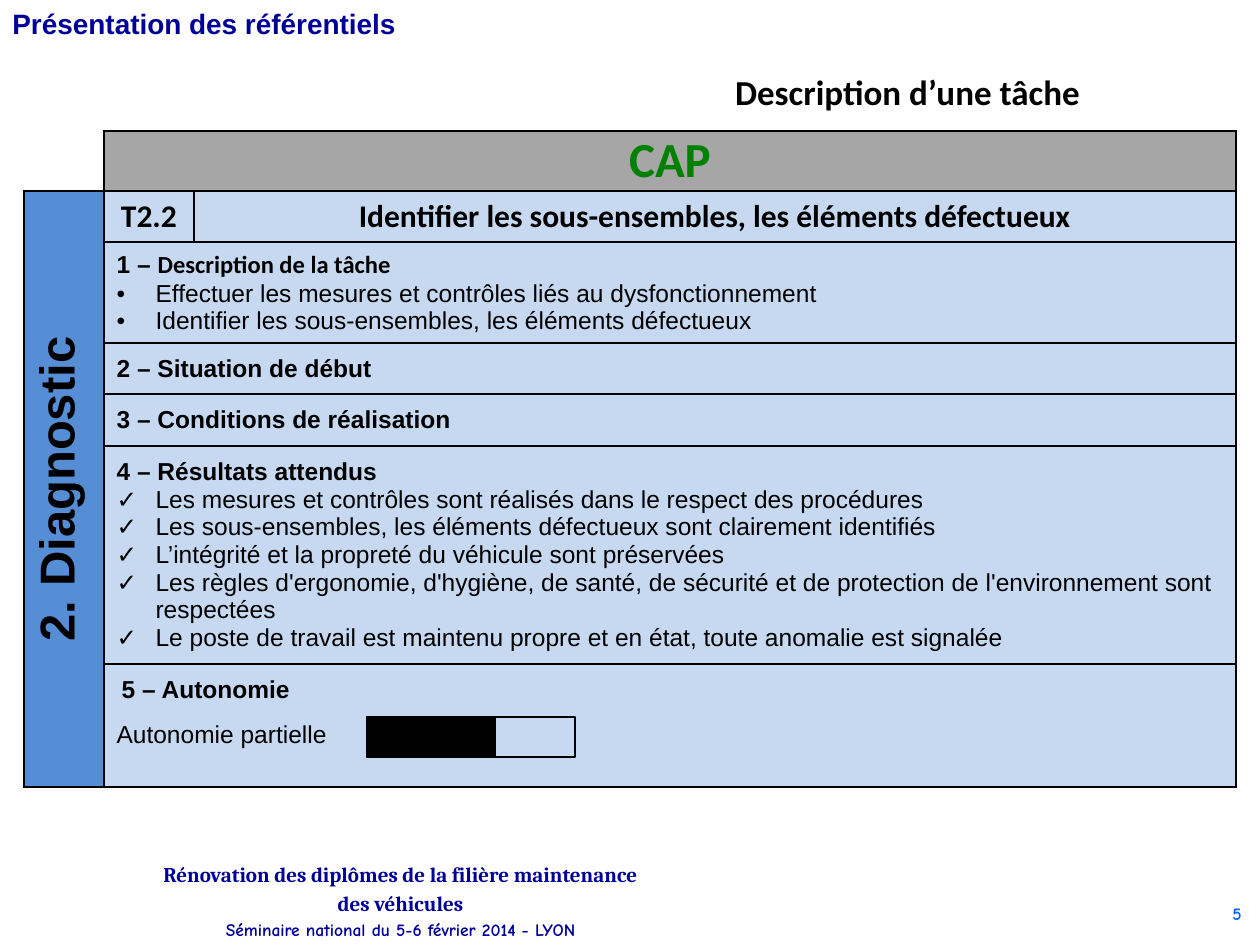
from lxml.etree import SubElement
from pptx import Presentation
from pptx.dml.color import RGBColor
from pptx.enum.shapes import MSO_SHAPE as Shape
from pptx.enum.text import MSO_ANCHOR as Anchor, PP_ALIGN as Align
from pptx.oxml.ns import qn
from pptx.util import Pt

PX = 914400 / 126
BLACK = RGBColor(0, 0, 0)
NAVY = RGBColor(0, 0, 0x99)
BLUE = RGBColor(0, 0x66, 0xFF)
GREEN = RGBColor(0, 0x80, 0)
GREY = RGBColor(0xA6, 0xA6, 0xA6)
MID_BLUE = RGBColor(0x55, 0x8E, 0xD5)
PALE_BLUE = RGBColor(0xC6, 0xD9, 0xF1)

HEADING = ("Arial", 14, True, BLACK)
BODY = ("Arial", 14, False, BLACK)
TASK = ("Calibri", 18, True, BLACK)

BOXES = [
    ((1178, 897, 76, 40), Anchor.TOP, Align.RIGHT, 1,
     [("5", ("Comic Neue", 10, True, BLUE))]),
    ((144, 863, 513, 71), Anchor.MIDDLE, Align.CENTER, 1.15,
     [("Rénovation des diplômes de la filière maintenance des véhicules",
       ("Cambria", 12, True, NAVY)),
      ("Séminaire national du 5-6 février 2014 - LYON",
       ("Comic Neue", 10, True, NAVY))]),
    ((0, 0, 412, 47), Anchor.TOP, Align.LEFT, 1,
     [("Présentation des référentiels", ("Arial", 16, True, NAVY))]),
    ((640, 64, 535, 55), Anchor.TOP, Align.CENTER, 1,
     [("Description d’une tâche", ("Calibri", 20, True, BLACK))]),
]

TABLE_AT = (24, 131)
COLUMNS = [80, 90, 1042]
ROWS = [59, 51, 101, 51, 52, 218, 51, 72]
HEADER = ("CAP", ("Calibri", 28, True, GREEN))
SIDE = ("2. Diagnostic", ("Arial", 28, True, BLACK))
TASK_ROW = ["T2.2", "Identifier les sous-ensembles, les éléments défectueux"]
SECTIONS = [
    ("1 – Description de la tâche", "•",
     ["Effectuer les mesures et contrôles liés au dysfonctionnement",
      "Identifier les sous-ensembles, les éléments défectueux"]),
    ("2 – Situation de début", "", []),
    ("3 – Conditions de réalisation", "", []),
    ("4 – Résultats attendus", "✓",
     ["Les mesures et contrôles sont réalisés dans le respect des procédures",
      "Les sous-ensembles, les éléments défectueux sont clairement identifiés",
      "L’intégrité et la propreté du véhicule sont préservées",
      "Les règles d'ergonomie, d'hygiène, de santé, de sécurité et de "
      "protection de l'environnement sont respectées",
      "Le poste de travail est maintenu propre et en état, toute anomalie est signalée"]),
    ("5 – Autonomie", "", []),
]
LEVEL = "Autonomie partielle"
GAUGE_AT = (367, 717)
GAUGE_HEIGHT = 40
GAUGE_BARS = [(208, None), (128, BLACK)]


def emu(*lengths):
    return [round(length * PX) for length in lengths]


def set_font(font, style):
    font.name, size, font.bold, font.color.rgb = style
    font.size = Pt(size)


def write(frame, lines, align=Align.LEFT, spacing=None):
    for index, (text, style) in enumerate(lines):
        para = frame.add_paragraph() if index else frame.paragraphs[0]
        para.add_run().text = text
        para.alignment = align
        para.line_spacing = spacing
        set_font(para.font, style)


def indent(para, left, bullet=""):
    props = para._p.get_or_add_pPr()
    margin = str(emu(left)[0])
    props.set("marL", margin)
    if bullet:
        props.set("indent", "-" + margin)
        SubElement(props, qn("a:buFont"), typeface="Arial")
        SubElement(props, qn("a:buChar"), char=bullet)


def write_section(frame, title, bullet, items):
    write(frame, [(title, HEADING)])
    for item in items:
        para = frame.add_paragraph()
        indent(para, 39, bullet)
        para.add_run().text = item
        set_font(para.font, BODY)


def set_borders(cell, sides):
    props = cell._tc.get_or_add_tcPr()
    for index, side in enumerate("LRTB"):
        line = SubElement(props, qn("a:ln" + side), w=str(Pt(1)))
        if side in sides:
            fill = SubElement(line, qn("a:solidFill"))
            SubElement(fill, qn("a:srgbClr"), val=str(BLACK))
        else:
            SubElement(line, qn("a:noFill"))
        props.insert(index, line)


def border_sides(row, column):
    if (row, column) == (0, 0):
        return "RB"
    if column and row == len(ROWS) - 2:
        return "LRT"
    if column and row == len(ROWS) - 1:
        return "LRB"
    return "LRTB"


def fill_cell(cell, row, column):
    if (row, column) == (0, 0):
        cell.fill.background()
        return
    cell.fill.solid()
    cell.fill.fore_color.rgb = GREY if row == 0 else PALE_BLUE if column else MID_BLUE


def add_task_table(page):
    frame = page.shapes.add_table(len(ROWS), len(COLUMNS),
                                  *emu(*TABLE_AT, sum(COLUMNS), sum(ROWS)))
    table = frame.table
    table.first_row = table.horz_banding = False
    for column, width in zip(table.columns, emu(*COLUMNS)):
        column.width = width
    for row, height in zip(table.rows, emu(*ROWS)):
        row.height = height
    for row in range(len(ROWS)):
        for column in range(len(COLUMNS)):
            cell = table.cell(row, column)
            cell.vertical_anchor = Anchor.MIDDLE
            fill_cell(cell, row, column)
            set_borders(cell, border_sides(row, column))
        if row != 1:
            table.cell(row, 1).merge(table.cell(row, 2))

    header, side = table.cell(0, 1), table.cell(1, 0)
    header.margin_top = header.margin_bottom = 0
    header.vertical_anchor = Anchor.TOP
    write(header.text_frame, [HEADER], Align.CENTER)
    side.merge(table.cell(len(ROWS) - 1, 0))
    side._tc.get_or_add_tcPr().set("vert", "vert270")
    write(side.text_frame, [SIDE], Align.CENTER)
    for column, text in enumerate(TASK_ROW, 1):
        write(table.cell(1, column).text_frame, [(text, TASK)], Align.CENTER)
    for row, section in enumerate(SECTIONS, 2):
        write_section(table.cell(row, 1).text_frame, *section)

    title = table.cell(2, 1).text_frame.paragraphs[0]
    number, label = SECTIONS[0][0].split("Description")
    title.runs[0].text = number
    span = title.add_run()
    span.text = "Description" + label
    span.font.name = "Calibri"
    indent(table.cell(6, 1).text_frame.paragraphs[0], 5)
    level = table.cell(7, 1)
    level.vertical_anchor = Anchor.TOP
    write(level.text_frame, [(LEVEL, BODY)])


def add_gauge(page):
    for width, color in GAUGE_BARS:
        bar = page.shapes.add_shape(Shape.RECTANGLE, *emu(*GAUGE_AT, width, GAUGE_HEIGHT))
        bar.shadow.inherit = False
        bar.line.color.rgb = BLACK
        bar.line.width = Pt(1.5)
        if color is None:
            bar.fill.background()
        else:
            bar.fill.solid()
            bar.fill.fore_color.rgb = color


def main():
    """Build the task description slide."""
    deck = Presentation()
    deck.slide_width, deck.slide_height = emu(1260, 945)
    page = deck.slides.add_slide(deck.slide_layouts[6])
    add_task_table(page)
    add_gauge(page)
    for place, anchor, align, spacing, lines in BOXES:
        frame = page.shapes.add_textbox(*emu(*place)).text_frame
        frame.word_wrap = True
        frame.vertical_anchor = anchor
        write(frame, lines, align, spacing)
    deck.save("out.pptx")


if __name__ == "__main__":
    main()
